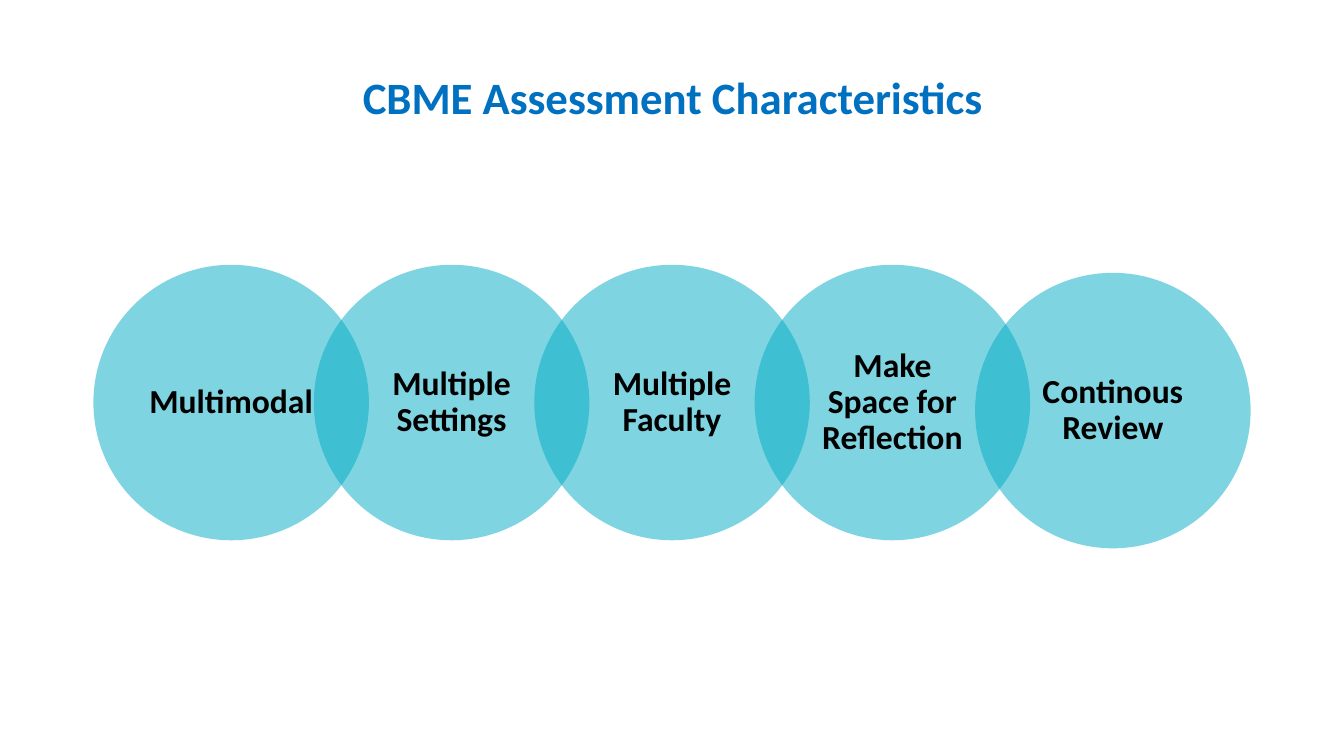
from lxml.etree import SubElement
from pptx import Presentation
from pptx.dml.color import RGBColor
from pptx.enum.shapes import MSO_SHAPE
from pptx.enum.text import MSO_ANCHOR, PP_ALIGN
from pptx.oxml.ns import qn
from pptx.util import Inches, Pt

# Content: label and downward shift of each circle
TITLE = "CBME Assessment Characteristics"
CIRCLES = [
    ("Multimodal", 0),
    ("Multiple Settings", 0),
    ("Multiple Faculty", 0),
    ("Make Space for Reflection", 0),
    ("Continous Review", 0.06),
]

# Slide is 16:9; neighbouring circles overlap by a fifth of the diameter
WIDTH = 10
HEIGHT = WIDTH * 9 / 16
DIAMETER = 2.05
STEP = DIAMETER * 0.8
LEFT = (WIDTH - DIAMETER - STEP * (len(CIRCLES) - 1)) / 2
TOP = 1.97
INSET = 0.3
LABEL = DIAMETER - 2 * INSET


def rgb(value):
    return RGBColor.from_string(value)


def write(sp, text, size=18, color="000000", margins=(0.11, 0.03)):
    tf = sp.text_frame
    tf.word_wrap = True
    tf.vertical_anchor = MSO_ANCHOR.MIDDLE
    tf.margin_left = tf.margin_right = Inches(margins[0])
    tf.margin_top = tf.margin_bottom = Inches(margins[1])
    p = tf.paragraphs[0]
    p.alignment = PP_ALIGN.CENTER
    p.line_spacing = 0.9
    r = p.add_run()
    r.text = text
    r.font.name = "Calibri"
    r.font.size = Pt(size)
    r.font.bold = True
    r.font.color.rgb = rgb(color)


def add_circle(s, x, y, color="00ABC5", opacity=50):
    sp = s.shapes.add_shape(MSO_SHAPE.OVAL, Inches(x), Inches(y),
                            Inches(DIAMETER), Inches(DIAMETER))
    sp.shadow.inherit = False
    sp.line.fill.background()
    sp.fill.solid()
    sp.fill.fore_color.rgb = rgb(color)
    clr = sp.fill._xPr.find(qn("a:solidFill"))[0]
    SubElement(clr, qn("a:alpha")).set("val", str(opacity * 1000))


prs = Presentation()
prs.slide_width, prs.slide_height = Inches(WIDTH), Inches(HEIGHT)
s = prs.slides.add_slide(prs.slide_layouts[5])

# Title
title = s.shapes.title
title.left, title.top = Inches(1.72), Inches(0.41)
title.width, title.height = Inches(6.57), Inches(0.67)
write(title, TITLE, size=24, color="0070C0", margins=(0.1, 0.05))

# Overlapping circles with their labels
for i, (text, shift) in enumerate(CIRCLES):
    x, y = LEFT + i * STEP, TOP + shift
    add_circle(s, x, y)
    label = s.shapes.add_textbox(Inches(x + INSET), Inches(y + INSET),
                                 Inches(LABEL), Inches(LABEL))
    write(label, text)

prs.save("out.pptx")
